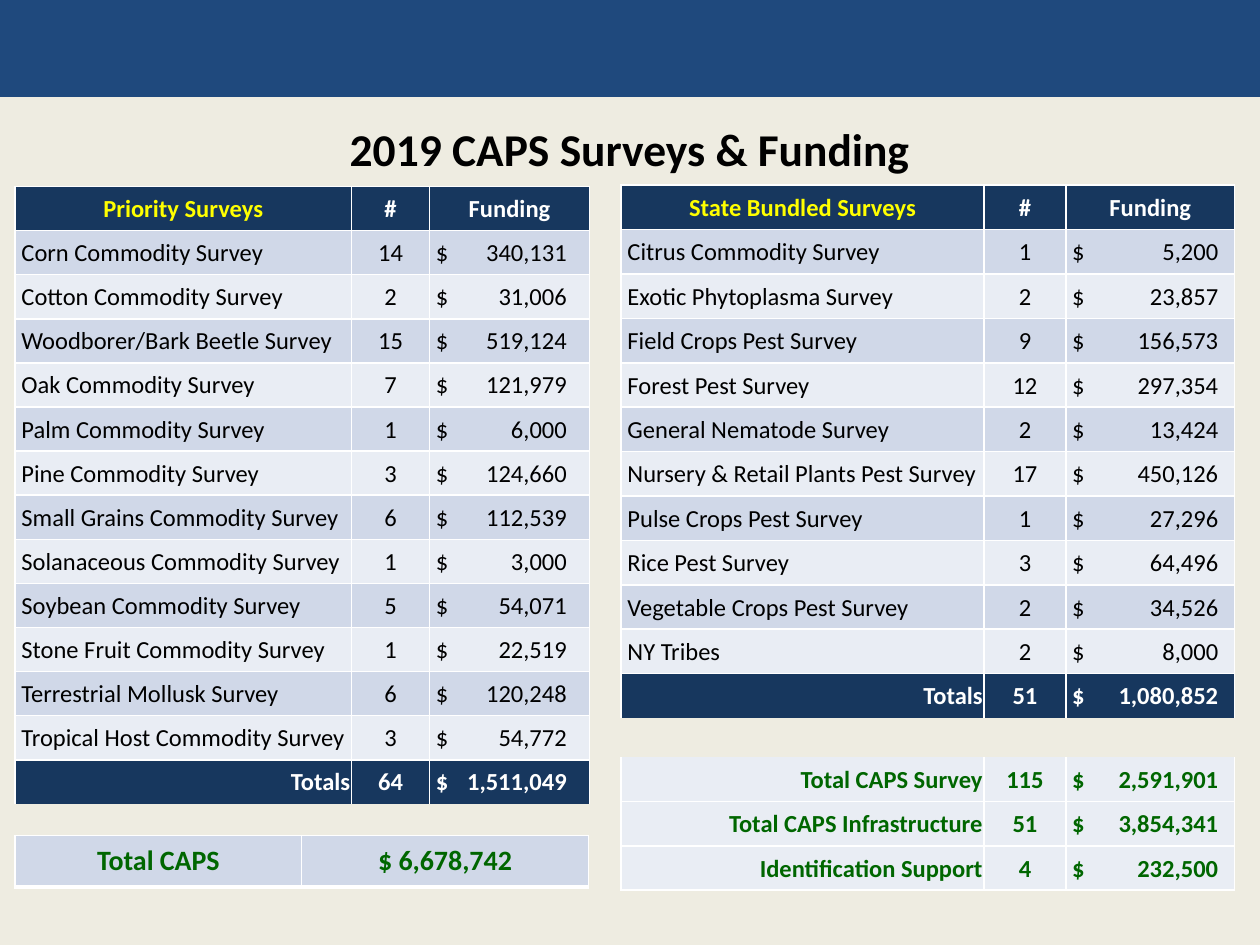
from lxml.etree import SubElement
from pptx import Presentation
from pptx.dml.color import RGBColor
from pptx.enum.shapes import MSO_SHAPE
from pptx.enum.text import MSO_ANCHOR as ANCHOR, PP_ALIGN as ALIGN
from pptx.oxml.ns import qn
from pptx.util import Inches, Pt

FONT = "Calibri"
CREAM = RGBColor(0xEE, 0xEC, 0xE1)
BLUE = RGBColor(0x1F, 0x49, 0x7D)
NAVY = RGBColor(0x17, 0x37, 0x5E)
BAND = RGBColor(0xD0, 0xD8, 0xE8)
PALE = RGBColor(0xE9, 0xED, 0xF4)
WHITE = RGBColor(0xFF, 0xFF, 0xFF)
BLACK = RGBColor(0, 0, 0)
YELLOW = RGBColor(0xFF, 0xFF, 0)
GREEN = RGBColor(0, 0x66, 0)
NO_STYLE = "{2D5ABB26-0587-4C30-8999-92F81FD0307C}"

PRIORITY = [
    ("Corn Commodity Survey", "14", "340,131"),
    ("Cotton Commodity Survey", "2", "31,006"),
    ("Woodborer/Bark Beetle Survey", "15", "519,124"),
    ("Oak Commodity Survey", "7", "121,979"),
    ("Palm Commodity Survey", "1", "6,000"),
    ("Pine Commodity Survey", "3", "124,660"),
    ("Small Grains Commodity Survey", "6", "112,539"),
    ("Solanaceous Commodity Survey", "1", "3,000"),
    ("Soybean Commodity Survey", "5", "54,071"),
    ("Stone Fruit Commodity Survey", "1", "22,519"),
    ("Terrestrial Mollusk Survey", "6", "120,248"),
    ("Tropical Host Commodity Survey", "3", "54,772"),
]
BUNDLED = [
    ("Citrus Commodity Survey", "1", "5,200"),
    ("Exotic Phytoplasma Survey", "2", "23,857"),
    ("Field Crops Pest Survey", "9", "156,573"),
    ("Forest Pest Survey", "12", "297,354"),
    ("General Nematode Survey", "2", "13,424"),
    ("Nursery & Retail Plants Pest Survey", "17", "450,126"),
    ("Pulse Crops Pest Survey", "1", "27,296"),
    ("Rice Pest Survey", "3", "64,496"),
    ("Vegetable Crops Pest Survey", "2", "34,526"),
    ("NY Tribes", "2", "8,000"),
]
SUMMARY = [
    ("Total CAPS Survey", "115", "2,591,901"),
    ("Total CAPS Infrastructure", "51", "3,854,341"),
    ("Identification Support", "4", "232,500"),
]


def set_borders(cell, **widths):
    """Give the named sides (L, R, T, B) a white line; hide a side of width 0."""
    pr = cell._tc.get_or_add_tcPr()
    lines = []
    for side in "LRTB":
        width = widths.get(side, 1)
        ln = SubElement(pr, qn(f"a:ln{side}"), w=str(Pt(width)))
        if width:
            fill = SubElement(ln, qn("a:solidFill"))
            SubElement(fill, qn("a:srgbClr"), val=str(WHITE))
        else:
            SubElement(ln, qn("a:noFill"))
        lines.append(ln)
    for i, ln in enumerate(lines):
        pr.insert(i, ln)


def fill_cell(cell, text, fill, color, align, bold=True, size=14, tab=None):
    """Write and format one cell, with an optional right tab stop."""
    cell.fill.solid()
    cell.fill.fore_color.rgb = fill
    cell.vertical_anchor = ANCHOR.MIDDLE
    p = cell.text_frame.paragraphs[0]
    p.text = text
    p.alignment = align
    if tab:
        tabs = SubElement(p._p.get_or_add_pPr(), qn("a:tabLst"))
        SubElement(tabs, qn("a:tab"), pos=str(tab), algn="r")
    for r in p.runs:
        r.font.name, r.font.size, r.font.bold = FONT, Pt(size), bold
        r.font.color.rgb = color


def add_plain_table(slide, rows, widths, left, top, height):
    """Add a table without a built-in style and set its column widths."""
    frame = slide.shapes.add_table(rows, len(widths), left, top, sum(widths), height)
    tbl = frame.table
    tbl.first_row = tbl.horz_banding = False
    frame._element.find(".//" + qn("a:tableStyleId")).text = NO_STYLE
    for col, width in zip(tbl.columns, widths):
        col.width = width
    return tbl


def add_survey_table(slide, box, widths, tab, heading, surveys, total, gap, summary=()):
    """Place a survey table in box: heading, surveys, totals, gap row, summary."""
    left, top, height = box
    gap_row = len(surveys) + 2
    count = gap_row + 1 + len(summary)
    tbl = add_plain_table(slide, count, widths, left, top, height)
    for i, row in enumerate(tbl.rows):
        row.height = gap if i == gap_row else int((height - gap) / (count - 1))

    rows = [((heading, "#", "Funding"), NAVY, WHITE, True, ALIGN.CENTER)]
    rows += [(s, PALE if i % 2 else BAND, BLACK, False, ALIGN.LEFT)
             for i, s in enumerate(surveys)]
    rows += [(("Totals", *total), NAVY, WHITE, True, ALIGN.RIGHT), None]
    rows += [(s, PALE, GREEN, True, ALIGN.RIGHT) for s in summary]

    for i, row in enumerate(rows):
        for j in range(3):
            cell = tbl.cell(i, j)
            cell.margin_left = cell.margin_right = cell.margin_top = Inches(0.01)
            cell.margin_bottom = 0
            if row is None:
                cell.text_frame.paragraphs[0]._p.get_or_add_endParaRPr().set("sz", "1000")
                set_borders(cell, L=0, R=0, T=0, B=0)
                continue
            values, fill, color, bold, label_align = row
            text, align, stop = values[j], ALIGN.CENTER, None
            if j == 0:
                align = label_align
                color = YELLOW if i == 0 else color
            elif j == 2 and i > 0:
                text, align, stop = "$\t" + text, ALIGN.LEFT, tab
            if align == ALIGN.LEFT:
                cell.margin_left = Inches(0.05)
            fill_cell(cell, text, fill, color, align, bold, tab=stop)
            set_borders(cell, T=int(i != gap_row + 1), B=int(i != gap_row - 1))


def add_grand_total(slide, left, top, width, height):
    """Place the two-cell grand total in the given box."""
    tbl = add_plain_table(slide, 1, [width // 2] * 2, left, top, height)
    tbl.rows[0].height = height
    for cell, text in zip(tbl.rows[0].cells, ("Total CAPS", "$ 6,678,742")):
        fill_cell(cell, text, BAND, GREEN, ALIGN.CENTER, size=16)
        set_borders(cell, B=3)


def add_banner(slide, left, top, width, height):
    """Place the blue band in the given box."""
    s = slide.shapes.add_shape(MSO_SHAPE.RECTANGLE, left, top, width, height)
    s.shadow.inherit = False
    s.fill.solid()
    s.fill.fore_color.rgb = BLUE
    s.line.fill.background()


def place_title(slide, left, top, width, height):
    """Move the title placeholder to the box and give its text a soft shadow."""
    s = slide.shapes.title
    s.left, s.top, s.width, s.height = left, top, width, height
    tf = s.text_frame
    tf.text = "2019 CAPS Surveys & Funding"
    tf.vertical_anchor = ANCHOR.MIDDLE
    p = tf.paragraphs[0]
    p.alignment = ALIGN.CENTER
    r = p.runs[0]
    r.font.size, r.font.bold = Pt(26), True
    r.font.color.rgb = BLACK
    effects = SubElement(r.font._element, qn("a:effectLst"))
    shadow = SubElement(effects, qn("a:outerShdw"), blurRad=str(Pt(3)),
                        dist=str(Pt(3)), dir="2700000", algn="tl")
    color = SubElement(shadow, qn("a:srgbClr"), val=str(BLACK))
    SubElement(color, qn("a:alpha"), val="43000")
    r.font.name = FONT


def main():
    """Build the slide and save it."""
    prs = Presentation()
    prs.slide_width, prs.slide_height = Inches(10), Inches(7.5)
    slide = prs.slides.add_slide(prs.slide_layouts[5])
    slide.background.fill.solid()
    slide.background.fill.fore_color.rgb = CREAM
    add_banner(slide, 0, 0, prs.slide_width, Inches(0.77))
    place_title(slide, Inches(0.5), Inches(0.79), Inches(9), Inches(0.78))
    add_survey_table(slide, (Inches(0.12), Inches(1.48), Inches(5.15)),
                     [Inches(w) for w in (2.67, 0.62, 1.27)], Inches(1.04),
                     "Priority Surveys", PRIORITY, ("64", "1,511,049"), Inches(0.25))
    add_survey_table(slide, (Inches(4.93), Inches(1.47), Inches(5.6)),
                     [Inches(w) for w in (2.88, 0.65, 1.34)], Inches(1.16),
                     "State Bundled Surveys", BUNDLED, ("51", "1,080,852"),
                     Inches(0.31), SUMMARY)
    add_grand_total(slide, Inches(0.12), Inches(6.63), Inches(4.55), Inches(0.41))
    prs.save("out.pptx")


if __name__ == "__main__":
    main()
